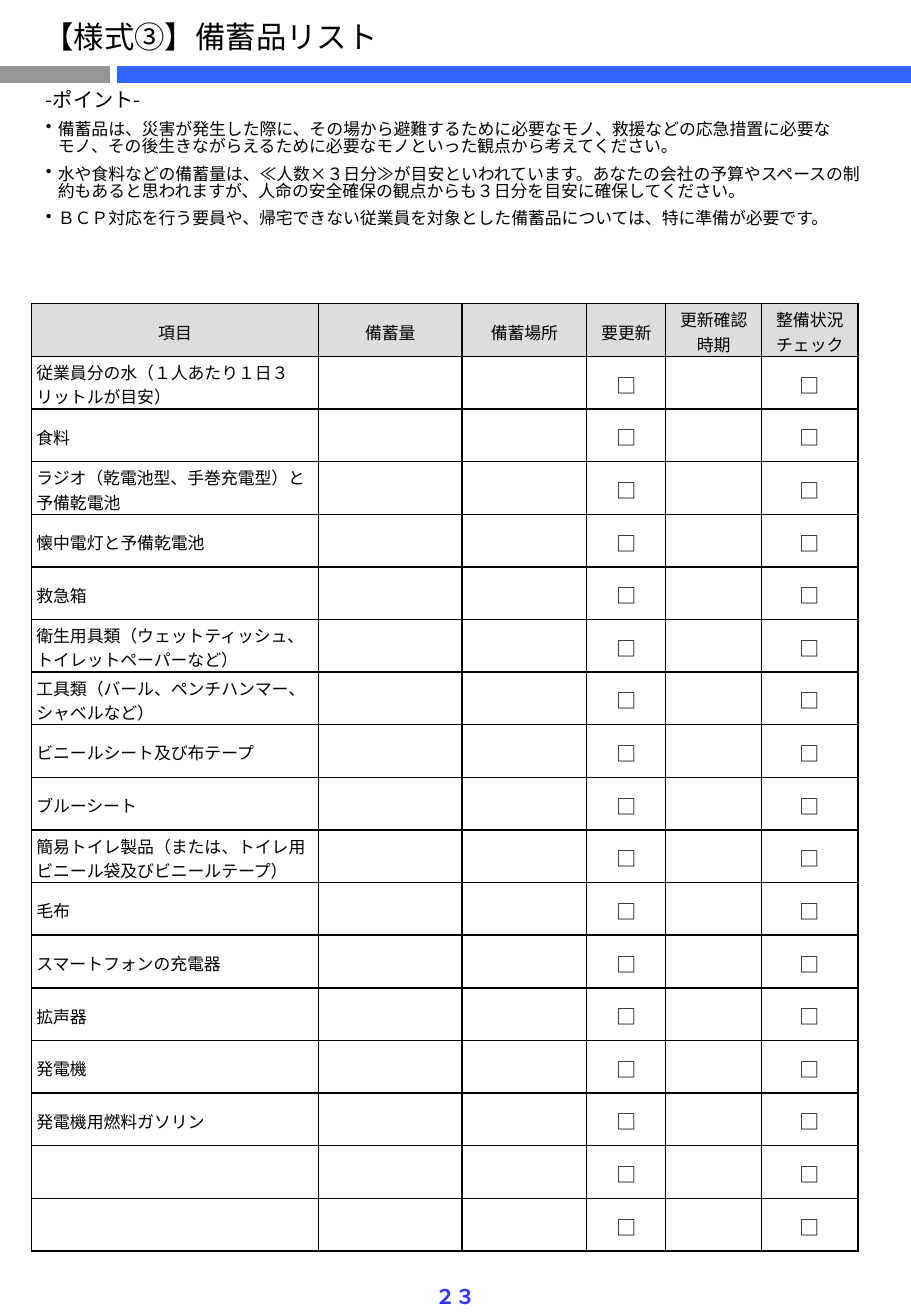
from dataclasses import dataclass

from lxml import etree
from pptx import Presentation
from pptx.dml.color import RGBColor
from pptx.enum.shapes import MSO_CONNECTOR
from pptx.enum.text import MSO_ANCHOR, PP_ALIGN
from pptx.oxml.ns import qn
from pptx.util import Cm, Pt

LEFT, CENTER = PP_ALIGN.LEFT, PP_ALIGN.CENTER
MIDDLE = MSO_ANCHOR.MIDDLE
STRAIGHT = MSO_CONNECTOR.STRAIGHT


@dataclass(frozen=True)
class Theme:
    font: str = "Noto Sans CJK JP"
    ink: str = "000000"
    paper: str = "FFFFFF"
    header: str = "DDDDDD"
    gray_bar: str = "969696"
    blue_bar: str = "3366FF"
    page_number: str = "3333FF"
    title_size: int = 18
    label_size: int = 12
    body_size: int = 10
    bar_width: int = 10
    border_width: int = 1


THEME = Theme()


def write(frame, text, size=THEME.body_size, color=THEME.ink, bold=False,
          align=LEFT, spacing=1.0, after=0, hanging=None, bullet=False, append=False):
    """Fill a text frame: \\n starts a paragraph, \\v breaks a line."""
    for index, content in enumerate(text.split("\n")):
        paragraph = frame.add_paragraph() if append or index else frame.paragraphs[0]
        paragraph.text = content
        paragraph.alignment = align
        paragraph.line_spacing = spacing
        paragraph.space_after = Pt(after)
        properties = paragraph._p.get_or_add_pPr()
        if hanging:
            properties.set("marL", str(hanging))
            properties.set("indent", str(-hanging))
        if bullet:
            etree.SubElement(properties, qn("a:buChar"), char="•")
        for run in paragraph.runs:
            run.font.name = THEME.font
            run.font.size = Pt(size)
            run.font.bold = bold
            run.font.color.rgb = RGBColor.from_string(color)
            etree.SubElement(run._r.rPr, qn("a:ea"), typeface=THEME.font)
        for line_break in paragraph._p.findall(qn("a:br")):
            etree.SubElement(line_break, qn("a:rPr"), sz=str(size * 100))


def add_borders(cell):
    properties = cell._tc.get_or_add_tcPr()
    for side in ("lnL", "lnR", "lnT", "lnB"):
        border = etree.SubElement(properties, qn(f"a:{side}"), w=str(Pt(THEME.border_width)))
        fill = etree.SubElement(border, qn("a:solidFill"))
        etree.SubElement(fill, qn("a:srgbClr"), val=THEME.ink)


presentation = Presentation()
presentation.slide_width, presentation.slide_height = Cm(19.05), Cm(27.51)
slide = presentation.slides.add_slide(presentation.slide_layouts[6])

# Title and the bars under it
BAR_Y = Cm(1.55)
for start, end, color in ((0, 2.29, THEME.gray_bar), (2.44, 19.05, THEME.blue_bar)):
    bar = slide.shapes.add_connector(STRAIGHT, Cm(start), BAR_Y, Cm(end), BAR_Y)
    bar.line.color.rgb = RGBColor.from_string(color)
    bar.line.width = Pt(THEME.bar_width)
    etree.SubElement(bar._element.spPr, qn("a:effectLst"))

title = slide.shapes.add_textbox(Cm(0.66), Cm(0.38), Cm(8.2), Cm(1.02)).text_frame
title.word_wrap = False
write(title, "【様式③】備蓄品リスト　", size=THEME.title_size, spacing=0.85)

# Points to keep in mind
POINTS = (
    "備蓄品は、災害が発生した際に、その場から避難するために必要なモノ、救援などの応急措置に必要な\v"
    "モノ、その後生きながらえるために必要なモノといった観点から考えてください。\n"
    "水や食料などの備蓄量は、≪人数×３日分≫が目安といわれています。あなたの会社の予算やスペースの"
    "制約もあると思われますが、人命の安全確保の観点からも３日分を目安に確保してください。\n"
    "ＢＣＰ対応を行う要員や、帰宅できない従業員を対象とした備蓄品については、特に準備が必要です。"
)
points = slide.shapes.add_textbox(Cm(0.71), Cm(1.78), Cm(17.6), Cm(3.56)).text_frame
points.word_wrap = True
point_format = {"spacing": 0.85, "after": 6, "hanging": Cm(0.25)}
write(points, "-ポイント-", size=THEME.label_size, **point_format)
write(points, POINTS, bullet=True, append=True, **point_format)

# Checklist of supplies
HEADERS = ("項目", "備蓄量", "備蓄場所", "要更新", "更新確認\n時期", "整備状況チェック")
SUPPLIES = (
    "従業員分の水（１人あたり１日３リットルが目安）",
    "食料",
    "ラジオ（乾電池型、手巻充電型）と予備乾電池",
    "懐中電灯と予備乾電池",
    "救急箱",
    "衛生用具類（ウェットティッシュ、トイレットペーパーなど）",
    "工具類（バール、ペンチハンマー、シャベルなど）",
    "ビニールシート及び布テープ",
    "ブルーシート",
    "簡易トイレ製品（または、トイレ用ビニール袋及びビニールテープ）",
    "毛布",
    "スマートフォンの充電器",
    "拡声器",
    "発電機",
    "発電機用燃料ガソリン",
    "",
    "",
)
COLUMN_WIDTHS = (6, 3, 2.61, 1.65, 2.01, 2.01)
ROW_HEIGHT = 1.1
rows = [HEADERS] + [(supply, "", "", "□", "", "□") for supply in SUPPLIES]

checklist = slide.shapes.add_table(
    len(rows), len(HEADERS), Cm(0.66), Cm(6.35),
    Cm(sum(COLUMN_WIDTHS)), Cm(ROW_HEIGHT * len(rows))).table
checklist.first_row = checklist.horz_banding = False
for column, width in zip(checklist.columns, COLUMN_WIDTHS):
    column.width = Cm(width)

for row_index, row in enumerate(rows):
    checklist.rows[row_index].height = Cm(ROW_HEIGHT)
    is_header = row_index == 0
    for column_index, text in enumerate(row):
        cell = checklist.cell(row_index, column_index)
        cell.vertical_anchor = MIDDLE
        cell.margin_left = cell.margin_right = Cm(0.1)
        cell.margin_top, cell.margin_bottom = Cm(0.07), 0
        add_borders(cell)
        cell.fill.solid()
        cell.fill.fore_color.rgb = RGBColor.from_string(
            THEME.header if is_header else THEME.paper)
        if text:
            write(cell.text_frame, text,
                  size=THEME.label_size if text == "□" else THEME.body_size,
                  align=CENTER if is_header or column_index else LEFT)

# Page number
page_number = slide.shapes.add_textbox(Cm(8.84), Cm(26.8), Cm(1.37), Cm(0.79)).text_frame
page_number.word_wrap = False
write(page_number, "２３", size=THEME.label_size, color=THEME.page_number,
      bold=True, align=CENTER, spacing=0.85)

presentation.save("out.pptx")
